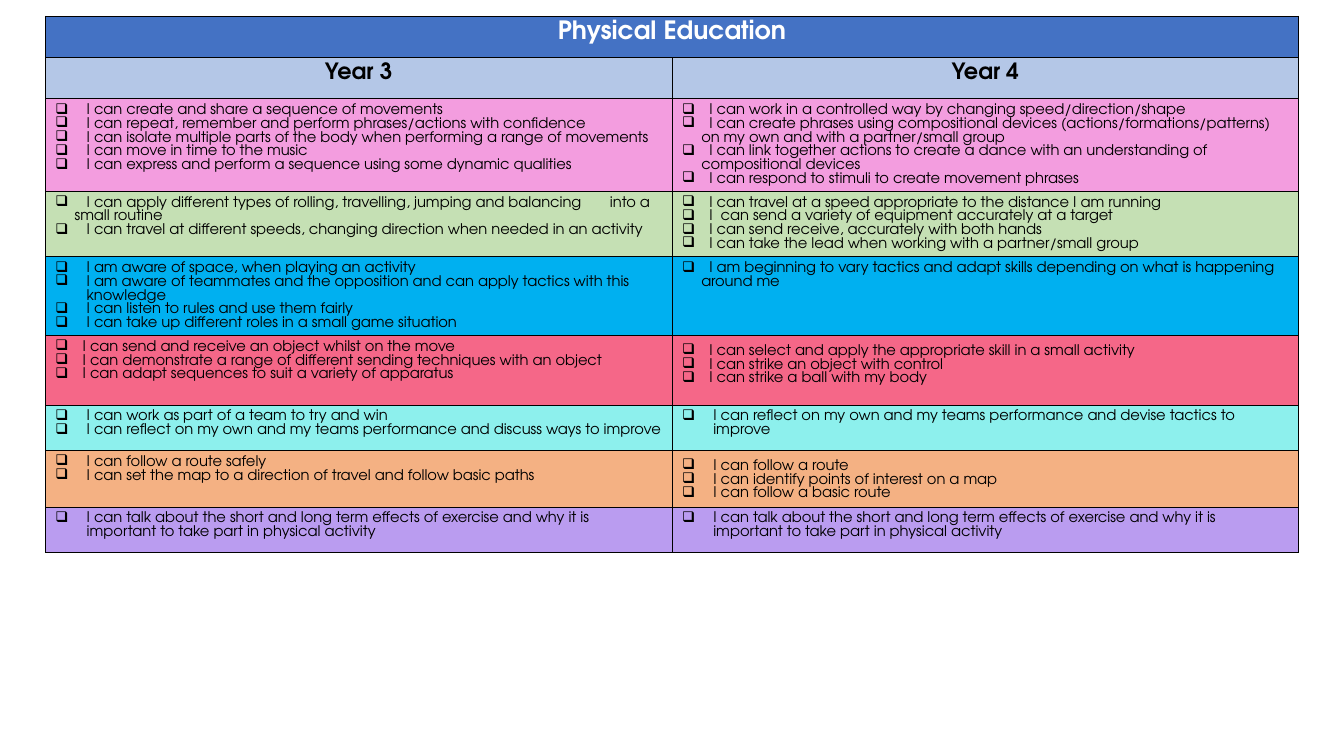
from dataclasses import dataclass
from lxml import etree
from pptx import Presentation
from pptx import util as u
from pptx.dml.color import RGBColor
from pptx.enum import text
from pptx.oxml import ns


@dataclass(frozen=True)
class Theme:
    font: str = "TeX Gyre Adventor"
    title_size: float = 18
    year_size: float = 16
    goal_size: float = 10.5
    leading: float = 0.93
    title_fill: str = "4472C4"
    year_fill: str = "B4C7E7"
    light: str = "FFFFFF"
    dark: str = "000000"
    border: float = 0.5
    bullet: str = "❑"
    wide: float = 0.31
    narrow: float = 0.27
    hanging: float = 0.19


@dataclass(frozen=True)
class Goals:
    lines: tuple
    indent: float
    top: float = 0.05


THEME = Theme()
HEADER_HEIGHT = 0.41
EXERCISE = Goals((
    "I can talk about the short and long term effects of exercise and why it is important to take part in physical activity",
), THEME.wide)

STRANDS = [
    (0.91, "F39DDF", Goals((
        "I can create and share a sequence of movements",
        "I can repeat, remember and perform phrases/actions with confidence",
        "I can isolate multiple parts of the body when performing a range of movements",
        "I can move in time to the music",
        "I can express and perform a sequence using some dynamic qualities",
    ), THEME.wide), Goals((
        "I can work in a controlled way by changing speed/direction/shape",
        "\tI can create phrases using compositional devices (actions/formations/patterns) on my own and with a partner/small group",
        "\tI can link together actions to create a dance with an understanding of compositional devices",
        "I can respond to stimuli to create movement phrases",
    ), THEME.narrow)),
    (0.65, "C5E0B4", Goals((
        "\tI can apply different types of rolling, travelling, jumping and balancing\tinto a small routine",
        "I can travel at different speeds, changing direction when needed in an activity",
    ), THEME.wide), Goals((
        "I can travel at a speed appropriate to the distance I am running",
        "I  can send a variety of equipment accurately at a target",
        "I can send receive, accurately with both hands",
        "I can take the lead when working with a partner/small group",
    ), THEME.narrow)),
    (0.77, "00B0F0", Goals((
        "I am aware of space, when playing an activity",
        "I am aware of teammates and the opposition and can apply tactics with this knowledge",
        "I can listen to rules and use them fairly",
        "I can take up different roles in a small game situation",
    ), THEME.wide), Goals((
        "\tI am beginning to vary tactics and adapt skills depending on what is happening around me",
    ), THEME.narrow)),
    (0.69, "F56788", Goals((
        "I can send and receive an object whilst on the move",
        "I can demonstrate a range of different sending techniques with an object",
        "I can adapt sequences to suit a variety of apparatus",
    ), THEME.narrow), Goals((
        "I can select and apply the appropriate skill in a small activity",
        "I can strike an object with control",
        "I can strike a ball with my body",
    ), THEME.narrow, 0.09)),
    (0.45, "8DF0ED", Goals((
        "I can work as part of a team to try and win",
        "I can reflect on my own and my teams performance and discuss ways to improve",
    ), THEME.wide), Goals((
        "I can reflect on my own and my teams performance and devise tactics to improve",
    ), THEME.wide)),
    (0.56, "F4B183", Goals((
        "I can follow a route safely",
        "I can set the map to a direction of travel and follow basic paths",
    ), THEME.wide), Goals((
        "I can follow a route",
        "I can identify points of interest on a map",
        "I can follow a basic route",
    ), THEME.wide, 0.09)),
    (0.45, "BA9CF0", EXERCISE, EXERCISE),
]


def style_cell(cell, fill):
    properties = cell._tc.get_or_add_tcPr()
    for side in ("lnL", "lnR", "lnT", "lnB"):
        edge = etree.SubElement(properties, ns.qn(f"a:{side}"), w=str(u.Pt(THEME.border)))
        ink = etree.SubElement(edge, ns.qn("a:solidFill"))
        etree.SubElement(ink, ns.qn("a:srgbClr"), val=THEME.dark)
    cell.fill.solid()
    cell.fill.fore_color.rgb = RGBColor.from_string(fill)


def style_paragraph(paragraph, size, color, bold):
    paragraph.line_spacing = u.Pt(round(size * THEME.leading, 1))
    for run in paragraph.runs:
        run.font.name = THEME.font
        run.font.size = u.Pt(size)
        run.font.bold = bold
        run.font.color.rgb = RGBColor.from_string(color)


def fill_heading(cell, heading, size, color, fill):
    style_cell(cell, fill)
    cell.text_frame.text = heading
    paragraph = cell.text_frame.paragraphs[0]
    paragraph.alignment = text.PP_ALIGN.CENTER
    style_paragraph(paragraph, size, color, True)


def set_bullet(paragraph, indent, stops):
    properties = paragraph._p.get_or_add_pPr()
    properties.set("marL", str(u.Inches(indent)))
    properties.set("indent", str(-u.Inches(indent)))
    etree.SubElement(properties, ns.qn("a:buChar"), char=THEME.bullet)
    if stops:
        tabs = etree.SubElement(properties, ns.qn("a:tabLst"))
        for stop in stops:
            etree.SubElement(tabs, ns.qn("a:tab"), pos=str(u.Inches(stop)), algn="l")


def fill_goals(cell, goals, fill):
    style_cell(cell, fill)
    cell.margin_top = u.Inches(goals.top)
    frame = cell.text_frame
    for number, line in enumerate(goals.lines):
        paragraph = frame.add_paragraph() if number else frame.paragraphs[0]
        paragraph.text = line
        paragraph.alignment = text.PP_ALIGN.LEFT
        style_paragraph(paragraph, THEME.goal_size, THEME.dark, False)
        tabbed = "\t" in line
        set_bullet(paragraph, THEME.hanging if tabbed else goals.indent,
                   (goals.indent, 5.5) if tabbed else ())


def add_curriculum(slide, left, top, width):
    heights = [HEADER_HEIGHT] * 2 + [strand[0] for strand in STRANDS]
    table = slide.shapes.add_table(
        len(heights), 2, u.Inches(left), u.Inches(top),
        u.Inches(width), u.Inches(sum(heights))).table
    for row, height in zip(table.rows, heights):
        row.height = u.Inches(height)
    table.cell(0, 0).merge(table.cell(0, 1))
    fill_heading(table.cell(0, 0), "Physical Education", THEME.title_size, THEME.light, THEME.title_fill)
    style_cell(table.cell(0, 1), THEME.title_fill)
    for column, year in enumerate(("Year 3", "Year 4")):
        fill_heading(table.cell(1, column), year, THEME.year_size, THEME.dark, THEME.year_fill)
    for row, (_, fill, *years) in enumerate(STRANDS, 2):
        for column, goals in enumerate(years):
            fill_goals(table.cell(row, column), goals, fill)


def main():
    deck = Presentation()
    deck.slide_width = u.Inches(13.33)
    deck.slide_height = u.Inches(7.5)
    slide = deck.slides.add_slide(deck.slide_layouts[6])
    add_curriculum(slide, 0.45, 0.16, 12.43)
    deck.save("out.pptx")


if __name__ == "__main__":
    main()
